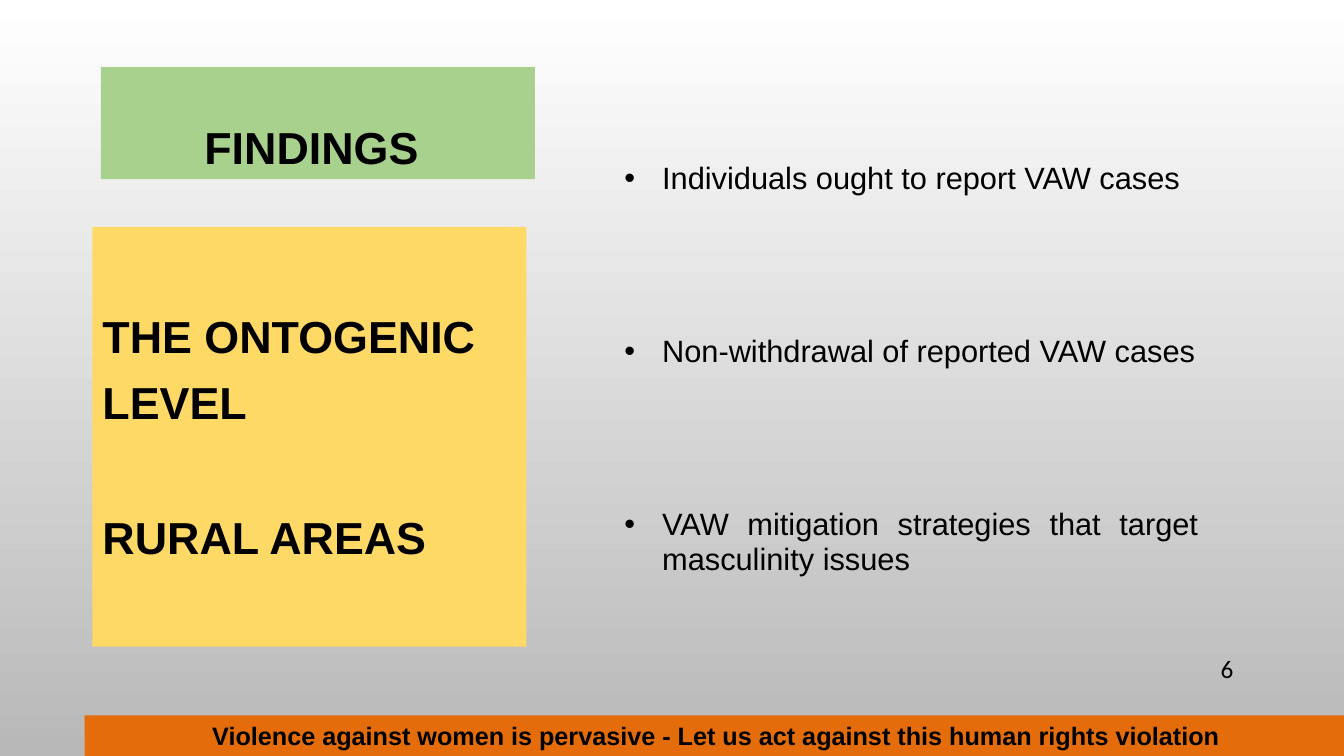
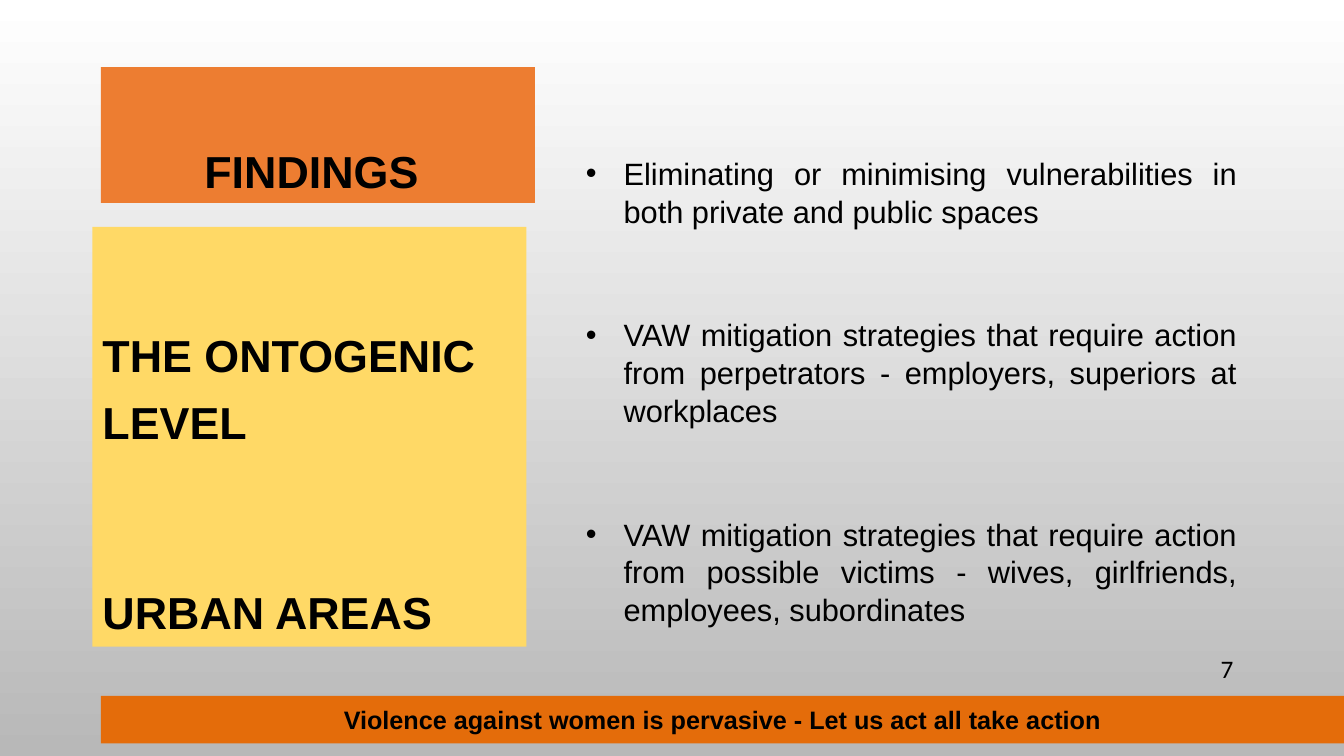
"""Build two findings slides on violence against women, for rural and urban areas."""
from lxml import etree
from pptx import Presentation
from pptx.dml.color import RGBColor
from pptx.enum.shapes import MSO_SHAPE
from pptx.enum.text import MSO_ANCHOR, MSO_AUTO_SIZE, PP_ALIGN
from pptx.oxml.ns import qn
from pptx.util import Pt

LEFT, CENTER, RIGHT, JUSTIFY = (
    PP_ALIGN.LEFT, PP_ALIGN.CENTER, PP_ALIGN.RIGHT, PP_ALIGN.JUSTIFY)
TOP, MIDDLE, BOTTOM = MSO_ANCHOR.TOP, MSO_ANCHOR.MIDDLE, MSO_ANCHOR.BOTTOM
NO_AUTOFIT = MSO_AUTO_SIZE.NONE
RECTANGLE = MSO_SHAPE.RECTANGLE
TWO_CONTENT = 3

COLORS = {
    "text": "000000",
    "bg_top": "FFFFFF",
    "bg_bottom": "B8B8B8",
    "green": "A9D18E",
    "orange": "ED7D31",
    "yellow": "FFD966",
    "band": "E46C0A",
}
HEADING = {"name": "Arial", "size": Pt(32), "bold": True}
BULLET = {"name": "Arial", "size": Pt(22), "bold": False}
BAND = {"name": "Arial", "size": Pt(18), "bold": True}
NUMBER = {"name": "Calibri", "size": Pt(18), "bold": False}

SLIDES = [
    {
        "number": "6",
        "title": {"color": "green", "height": 80},
        "level": {"area": "RURAL AREAS", "top": 49, "gap": 48.5},
        "list": {
            "y": 84, "inset": 38, "spacing": 0.93, "gap": 99,
            "items": [
                "Individuals ought to report VAW cases",
                "Non-withdrawal of reported VAW cases",
                "VAW mitigation strategies that target masculinity issues",
            ],
        },
        "band": {
            "box": (60.5, 511, 907, 29),
            "text": "Violence against women is pervasive - "
                    "Let us act against this human rights violation ",
        },
    },
    {
        "number": "7",
        "title": {"color": "orange", "height": 97},
        "level": {"area": "URBAN AREAS", "top": 63, "gap": 88},
        "list": {
            "y": 78, "inset": 10.5, "spacing": 1.02, "gap": 61.5,
            "items": [
                "Eliminating or minimising vulnerabilities in both private "
                "and public spaces ",
                "VAW mitigation strategies that require action from "
                "perpetrators - employers, superiors at workplaces",
                "VAW mitigation strategies that require action from possible "
                "victims - wives, girlfriends, employees, subordinates ",
            ],
        },
        "band": {
            "box": (72, 497, 888, 34),
            "text": "Violence against women is pervasive - "
                    "Let us act all take action",
        },
    },
]


def rgb(key):
    """Return the named colour."""
    return RGBColor.from_string(COLORS[key])


def set_all(obj, values):
    """Set each attribute of obj from a dict."""
    for name, value in values.items():
        setattr(obj, name, value)


def place(sp, x, y, w, h):
    """Move and size a shape, in points."""
    set_all(sp, {"left": Pt(x), "top": Pt(y), "width": Pt(w), "height": Pt(h)})


def paint(sp, key):
    """Fill a shape with a named colour."""
    sp.fill.solid()
    sp.fill.fore_color.rgb = rgb(key)


def set_bullet(p, bulleted):
    """Give a paragraph a round bullet, or take its bullet away."""
    pPr = p._p.get_or_add_pPr()
    indent = Pt(27) if bulleted else 0
    pPr.set("marL", str(indent))
    pPr.set("indent", str(-indent))
    if not bulleted:
        etree.SubElement(pPr, qn("a:buNone"))
        return
    color = etree.SubElement(pPr, qn("a:buClr"))
    etree.SubElement(color, qn("a:srgbClr"), val=COLORS["text"])
    etree.SubElement(pPr, qn("a:buFont"), typeface="Arial")
    etree.SubElement(pPr, qn("a:buChar"), char="•")


def write(sp, lines, font, align, anchor, frame=None, spacing=1.0, gap=0,
          bulleted=False):
    """Write evenly spaced paragraphs in one format into a shape."""
    tf = sp.text_frame
    set_all(tf, {"word_wrap": True, "auto_size": NO_AUTOFIT,
                 "vertical_anchor": anchor, **(frame or {})})
    for i, line in enumerate(lines):
        p = tf.add_paragraph() if i else tf.paragraphs[0]
        set_bullet(p, bulleted)
        set_all(p, {"alignment": align, "line_spacing": spacing,
                    "space_before": Pt(gap if i else 0), "space_after": Pt(0)})
        r = p.add_run()
        r.text = line
        set_all(r.font, font)
        r.font.color.rgb = rgb("text")


def set_background(master):
    """Give the master a vertical gradient."""
    fill = master.background.fill
    fill.gradient()
    fill.gradient_angle = 270
    for stop, key in zip(fill.gradient_stops, ("bg_top", "bg_bottom")):
        stop.color.rgb = rgb(key)


def add_title(s, color, height):
    """Fill the title placeholder as a coloured panel."""
    sp = s.shapes.title
    place(sp, 72, 48, 310, height)
    paint(sp, color)
    write(sp, ["FINDINGS "], HEADING, CENTER, BOTTOM, spacing=0.9)


def add_level(s, area, top, gap):
    """Fill the left placeholder with the level and its area."""
    sp = s.placeholders[1]
    place(sp, 66, 162, 310, 300)
    paint(sp, "yellow")
    write(sp, ["THE ONTOGENIC LEVEL", area], HEADING, LEFT, TOP,
          {"margin_top": Pt(top)}, 1.24, gap)


def add_list(s, items, y, inset, spacing, gap):
    """Fill the right placeholder with the bulleted findings."""
    sp = s.placeholders[2]
    place(sp, 408, y, 486, 384)
    frame = {"margin_left": Pt(inset), "margin_right": Pt(inset),
             "margin_top": Pt(32)}
    write(sp, items, BULLET, JUSTIFY, TOP, frame, spacing, gap, True)


def add_band(s, box, text):
    """Add the slogan band at the foot of the slide."""
    sp = s.shapes.add_shape(RECTANGLE, *map(Pt, box))
    sp.shadow.inherit = False
    sp.line.fill.background()
    paint(sp, "band")
    write(sp, [text], BAND, CENTER, MIDDLE)


def add_number(s, number):
    """Add the slide number."""
    sp = s.shapes.add_textbox(Pt(828), Pt(463), Pt(60), Pt(29))
    write(sp, [number], NUMBER, RIGHT, MIDDLE)


def main():
    """Build and save the presentation."""
    prs = Presentation()
    set_all(prs, {"slide_width": Pt(960), "slide_height": Pt(540)})
    set_background(prs.slide_master)
    for content in SLIDES:
        s = prs.slides.add_slide(prs.slide_layouts[TWO_CONTENT])
        add_title(s, **content["title"])
        add_level(s, **content["level"])
        add_list(s, **content["list"])
        add_band(s, **content["band"])
        add_number(s, content["number"])
    prs.save("out.pptx")


if __name__ == "__main__":
    main()
